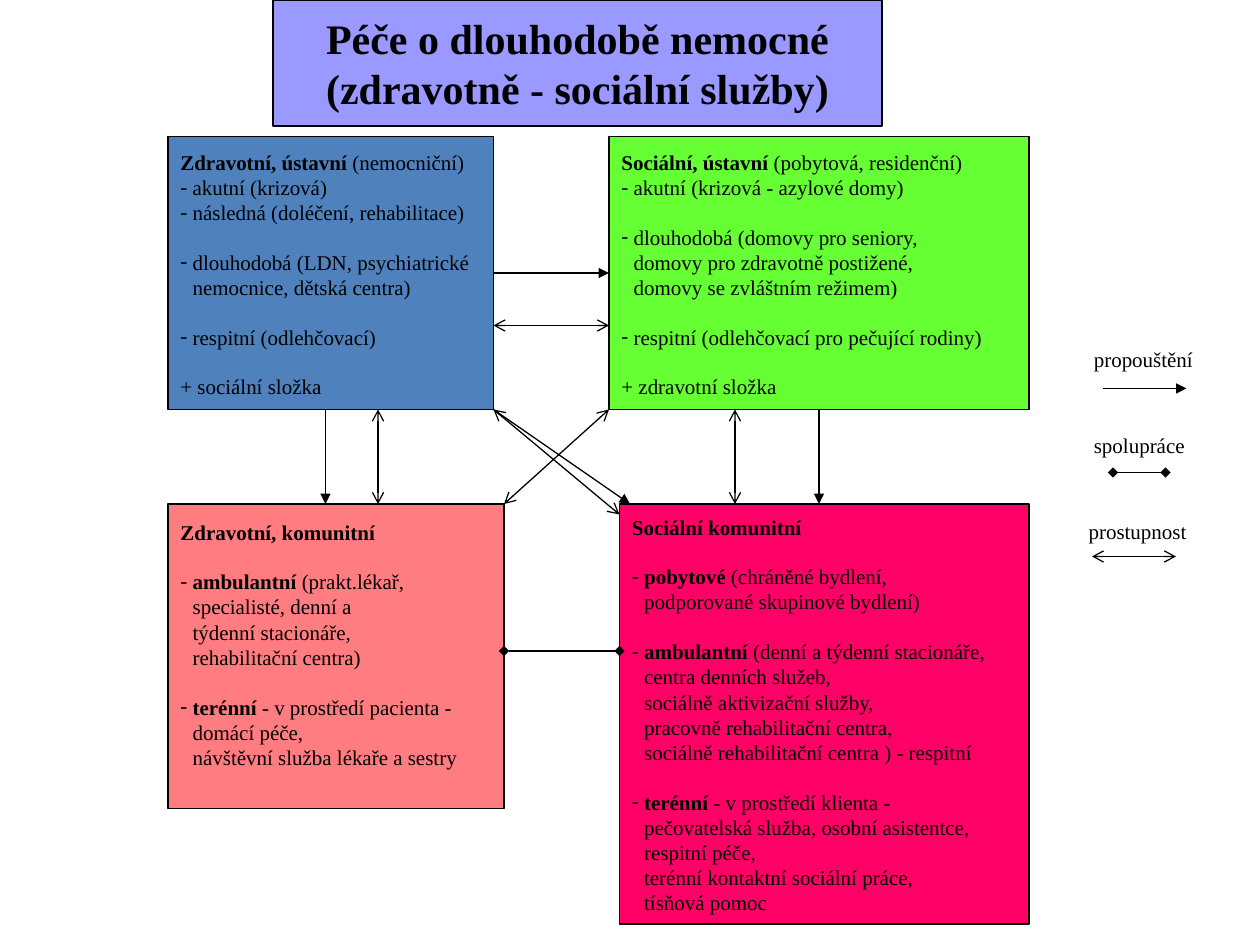
from lxml.etree import SubElement
from pptx import Presentation
from pptx.dml.color import RGBColor
from pptx.enum.shapes import MSO_CONNECTOR, MSO_SHAPE
from pptx.enum.text import MSO_ANCHOR, PP_ALIGN
from pptx.oxml.ns import qn
from pptx.util import Inches, Pt

BLACK = RGBColor(0x00, 0x00, 0x00)
LAVENDER = RGBColor(0x99, 0x99, 0xFF)
BLUE = RGBColor(0x4F, 0x81, 0xBD)
GREEN = RGBColor(0x66, 0xFF, 0x33)
SALMON = RGBColor(0xFF, 0x7C, 0x80)
PINK = RGBColor(0xFF, 0x00, 0x66)

UNIT = Inches(10) // 120  # the slide is a grid of 120 columns by 90 rows
FONT = "Times New Roman"
BODY = 12
LINE_GAP = Pt(14)
HANG = Pt(7)

# Arrow kinds: (head, tail)
DISCHARGE = (None, "triangle")
COOPERATION = ("diamond", "diamond")
PASSAGE = ("arrow", "arrow")

# Boxes in grid units: left, top, width, height
TITLE = (26, 0, 58, 12)
HEALTH_INST = (16, 13, 31, 26)
SOCIAL_INST = (58, 13, 40, 26)
HEALTH_COMM = (16, 48, 32, 29)
SOCIAL_COMM = (59, 48, 39, 40)
LEGEND = (103, 32, 17, 22)

# Each panel: box, fill, top inset in inches, blocks of lines (** marks bold)
PANELS = [
    (HEALTH_INST, BLUE, 0.1, [
        ["**Zdravotní, ústavní** (nemocniční)", "- akutní (krizová)",
         "- následná (doléčení, rehabilitace)"],
        ["- dlouhodobá (LDN, psychiatrické", "nemocnice, dětská centra)"],
        ["- respitní (odlehčovací)"],
        ["+ sociální složka"]]),
    (SOCIAL_INST, GREEN, 0.1, [
        ["**Sociální, ústavní** (pobytová, residenční)",
         "- akutní (krizová - azylové domy)"],
        ["- dlouhodobá (domovy pro seniory,", "domovy pro zdravotně postižené,",
         "domovy se zvláštním režimem)"],
        ["- respitní (odlehčovací pro pečující rodiny)"],
        ["+ zdravotní složka"]]),
    (HEALTH_COMM, SALMON, 0.12, [
        ["**Zdravotní, komunitní**"],
        ["- **ambulantní** (prakt.lékař,", "specialisté, denní a",
         "týdenní stacionáře,", "rehabilitační centra)"],
        ["- **terénní** - v prostředí pacienta -", "domácí péče,",
         "návštěvní služba lékaře a sestry"]]),
    (SOCIAL_COMM, PINK, 0.08, [
        ["**Sociální komunitní**"],
        ["- **pobytové** (chráněné bydlení,", "podporované skupinové bydlení)"],
        ["- **ambulantní** (denní a týdenní stacionáře,", "centra denních služeb,",
         "sociálně aktivizační služby,", "pracovně rehabilitační centra,",
         "sociálně rehabilitační centra ) - respitní"],
        ["- **terénní** - v prostředí klienta -",
         "pečovatelská služba, osobní asistentce,", "respitní péče,",
         "terénní kontaktní sociální práce,", "tísňová pomoc"]]),
]


def add_runs(p, text, size=BODY):
    """Alternate regular and bold runs at each ** mark."""
    for i, part in enumerate(text.split("**")):
        if part:
            r = p.add_run()
            r.text = part
            style = {"name": FONT, "size": Pt(size), "bold": i % 2 == 1}
            for key, value in style.items():
                setattr(r.font, key, value)
            r.font.color.rgb = BLACK


def next_paragraph(tf, first):
    return tf.paragraphs[0] if first else tf.add_paragraph()


def set_indent(p, bullet):
    """Hang a dash bullet, or align a continuation line with its item."""
    pPr = p._p.get_or_add_pPr()
    pPr.set("marL", str(HANG))
    pPr.set("indent", str(-HANG if bullet else 0))
    if bullet:
        SubElement(pPr, qn("a:buFont"), typeface=FONT)
        SubElement(pPr, qn("a:buChar"), char="-")


def add_box(slide, box, fill):
    s = slide.shapes.add_shape(MSO_SHAPE.RECTANGLE, *(v * UNIT for v in box))
    s.shadow.inherit = False
    s.fill.solid()
    s.fill.fore_color.rgb = fill
    s.line.color.rgb = BLACK
    s.line.width = Pt(0.75)
    s.text_frame.word_wrap = True
    return s.text_frame


def add_title(slide, box, lines):
    tf = add_box(slide, box, LAVENDER)
    tf.vertical_anchor = MSO_ANCHOR.MIDDLE
    for i, line in enumerate(lines):
        p = next_paragraph(tf, i == 0)
        p.alignment = PP_ALIGN.CENTER
        add_runs(p, f"**{line}**", 24)


def add_panel(slide, box, fill, inset, blocks):
    tf = add_box(slide, box, fill)
    tf.vertical_anchor = MSO_ANCHOR.TOP
    tf.margin_top = Inches(inset)
    for b, block in enumerate(blocks):
        in_item = False
        for i, line in enumerate(block):
            p = next_paragraph(tf, b == i == 0)
            p.alignment = PP_ALIGN.LEFT
            if b and i == 0:
                p.space_before = LINE_GAP
            bullet = line.startswith("- ")
            in_item = in_item or bullet
            if in_item:
                set_indent(p, bullet)
            add_runs(p, line.removeprefix("- "))


def add_arrow(slide, start, end, kind):
    c = slide.shapes.add_connector(
        MSO_CONNECTOR.STRAIGHT, *(round(v * UNIT) for v in (*start, *end)))
    c.line.color.rgb = BLACK
    c.line.width = Pt(0.75)
    ln = c.line._get_or_add_ln()
    for tag, end_type in zip(("a:headEnd", "a:tailEnd"), kind):
        if end_type:
            SubElement(ln, qn(tag), type=end_type)
    SubElement(c._element.spPr, qn("a:effectLst"))


def add_flows(slide):
    """Join the four panels across the gaps between them."""
    left, top, width, height = HEALTH_INST
    right, bottom = left + width, top + height
    social_left = SOCIAL_INST[0]
    low_left, low_top = SOCIAL_COMM[:2]
    health_right = HEALTH_COMM[0] + HEALTH_COMM[2]
    for y, kind in ((top + height / 2, DISCHARGE), (top + 18, PASSAGE)):
        add_arrow(slide, (right, y), (social_left, y), kind)
    for x, kind in ((left + 15, DISCHARGE), (left + 20, PASSAGE),
                    (social_left + 12, PASSAGE), (social_left + 20, DISCHARGE)):
        add_arrow(slide, (x, bottom), (x, low_top), kind)
    add_arrow(slide, (health_right, low_top + 14), (low_left, low_top + 14),
              COOPERATION)
    add_arrow(slide, (right, bottom), (low_left + 1, low_top), DISCHARGE)
    add_arrow(slide, (right, bottom), (low_left, low_top + 1), PASSAGE)
    add_arrow(slide, (health_right, low_top), (social_left, bottom), PASSAGE)


def add_legend(slide, box):
    left, top, width, _ = box
    entries = [("propouštění", 0, 2, 10, DISCHARGE),
               ("spolupráce", 0, 3, 8, COOPERATION),
               ("prostupnost", -0.5, 1, 9, PASSAGE)]
    for i, (label, shift, start, end, kind) in enumerate(entries):
        y = top + 8.2 * i + 0.4
        tb = slide.shapes.add_textbox(*(round(v * UNIT) for v in
                                        (left + shift, y, width, 4)))
        tb.text_frame.word_wrap = True
        add_runs(tb.text_frame.paragraphs[0], label)
        line_y = top + 5 + 8 * i
        add_arrow(slide, (left + start, line_y), (left + end, line_y), kind)


def main():
    prs = Presentation()
    prs.slide_width, prs.slide_height = 120 * UNIT, 90 * UNIT
    slide = prs.slides.add_slide(prs.slide_layouts[6])
    add_title(slide, TITLE, ["Péče o dlouhodobě nemocné",
                             "(zdravotně - sociální služby)"])
    for panel in PANELS:
        add_panel(slide, *panel)
    add_legend(slide, LEGEND)
    add_flows(slide)
    prs.save("out.pptx")


if __name__ == "__main__":
    main()
